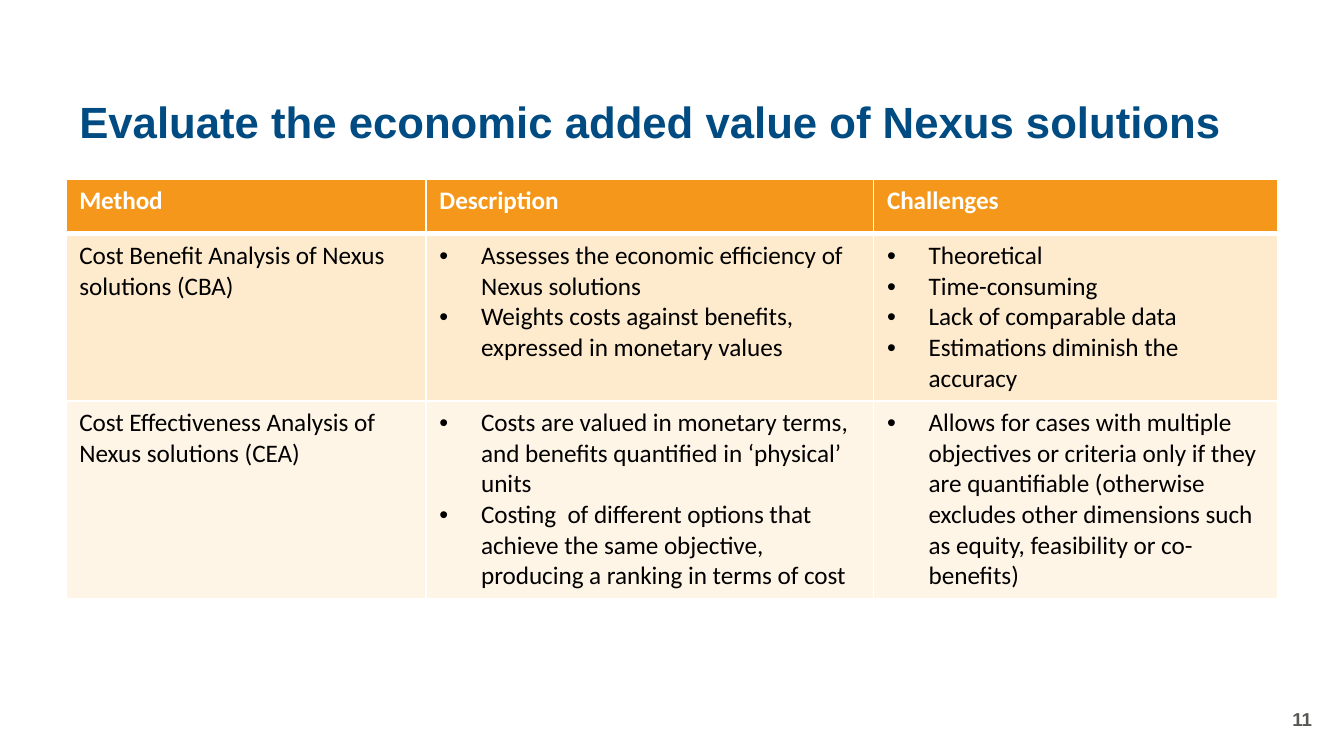
"""Build a slide with a table comparing economic valuation methods."""
from dataclasses import dataclass

from lxml.etree import SubElement
from pptx import Presentation
from pptx.dml.color import RGBColor
from pptx.enum.text import MSO_ANCHOR, MSO_AUTO_SIZE, PP_ALIGN
from pptx.oxml.ns import qn
from pptx.util import Inches, Pt


@dataclass(frozen=True)
class Theme:
    title: str = "004C82"
    number: str = "575756"
    body: str = "000000"
    white: str = "FFFFFF"
    row_fills: tuple = ("F4971A", "FEEACC", "FFF5E7")
    title_size: float = 23.4
    table_size: float = 13.5
    number_size: float = 10
    heading_font: str = "Arial"
    table_font: str = "Calibri"


theme = Theme()


def write_text(frame, lines, *, font, size, color, bold=False, bullet=False,
               align=PP_ALIGN.LEFT, spacing=1.0):
    for index, line in enumerate(lines):
        paragraph = frame.add_paragraph() if index else frame.paragraphs[0]
        if bullet:
            properties = paragraph._p.get_or_add_pPr()
            properties.set("marL", str(Inches(0.31)))
            properties.set("indent", str(Inches(-0.31)))
            SubElement(properties, qn("a:buFont"), typeface="Arial")
            SubElement(properties, qn("a:buChar"), char="•")
        paragraph.alignment = align
        paragraph.line_spacing = spacing
        run = paragraph.add_run()
        run.text = line
        run.font.name = font
        run.font.size = Pt(size)
        run.font.bold = bold
        run.font.color.rgb = RGBColor.from_string(color)


def add_borders(cell, widths):
    properties = cell._tc.get_or_add_tcPr()
    for side, width in widths.items():
        line = SubElement(properties, qn(f"a:ln{side}"), w=str(Pt(width)))
        fill = SubElement(line, qn("a:solidFill"))
        SubElement(fill, qn("a:srgbClr"), val=theme.white)


presentation = Presentation()
presentation.slide_width = Inches(10)
presentation.slide_height = Inches(10) * 9 // 16
slide = presentation.slides.add_slide(presentation.slide_layouts[5])

title = slide.shapes.title
title.left, title.top = Inches(0.49), Inches(0.63)
title.width, title.height = Inches(9.37), Inches(0.59)
title.text_frame.auto_size = MSO_AUTO_SIZE.NONE
title.text_frame.vertical_anchor = MSO_ANCHOR.MIDDLE
write_text(title.text_frame, ["Evaluate the economic added value of Nexus solutions"],
           font=theme.heading_font, size=theme.title_size, color=theme.title,
           bold=True, spacing=0.9)

rows = [
    [["Method"], ["Description"], ["Challenges"]],
    [
        ["Cost Benefit Analysis of Nexus solutions (CBA)"],
        ["Assesses the economic efficiency of Nexus solutions",
         "Weights costs against benefits, expressed in monetary values"],
        ["Theoretical", "Time-consuming", "Lack of comparable data",
         "Estimations diminish the accuracy"],
    ],
    [
        ["Cost Effectiveness Analysis of Nexus solutions (CEA)"],
        ["Costs are valued in monetary terms, and benefits quantified in ‘physical’ units",
         "Costing  of different options that achieve the same objective, "
         "producing a ranking in terms of cost"],
        ["Allows for cases with multiple objectives or criteria only if they are "
         "quantifiable (otherwise excludes other dimensions such as equity, "
         "feasibility or co-benefits)"],
    ],
]
column_widths = [2.68, 3.33, 3.01]
row_heights = [0.41, 1.24, 1.46]

table = slide.shapes.add_table(len(rows), len(column_widths), Inches(0.49), Inches(1.33),
                               Inches(sum(column_widths)), Inches(sum(row_heights))).table
for column, width in zip(table.columns, column_widths):
    column.width = Inches(width)
for row, height in zip(table.rows, row_heights):
    row.height = Inches(height)

for row_index, row in enumerate(rows):
    is_header = row_index == 0
    for column_index, lines in enumerate(row):
        cell = table.cell(row_index, column_index)
        add_borders(cell, {"L": 1, "R": 1, "T": 3 if row_index == 1 else 1,
                           "B": 3 if is_header else 1})
        cell.fill.solid()
        cell.fill.fore_color.rgb = RGBColor.from_string(theme.row_fills[row_index])
        write_text(cell.text_frame, lines, font=theme.table_font, size=theme.table_size,
                   color=theme.white if is_header else theme.body, bold=is_header,
                   bullet=not is_header and column_index > 0)

number_box = slide.shapes.add_textbox(Inches(7.61), Inches(5.2), Inches(2.25), Inches(0.3))
number_box.text_frame.word_wrap = True
number_box.text_frame.vertical_anchor = MSO_ANCHOR.MIDDLE
write_text(number_box.text_frame, ["11"], font=theme.heading_font, size=theme.number_size,
           color=theme.number, bold=True, align=PP_ALIGN.RIGHT)

presentation.save("out.pptx")
